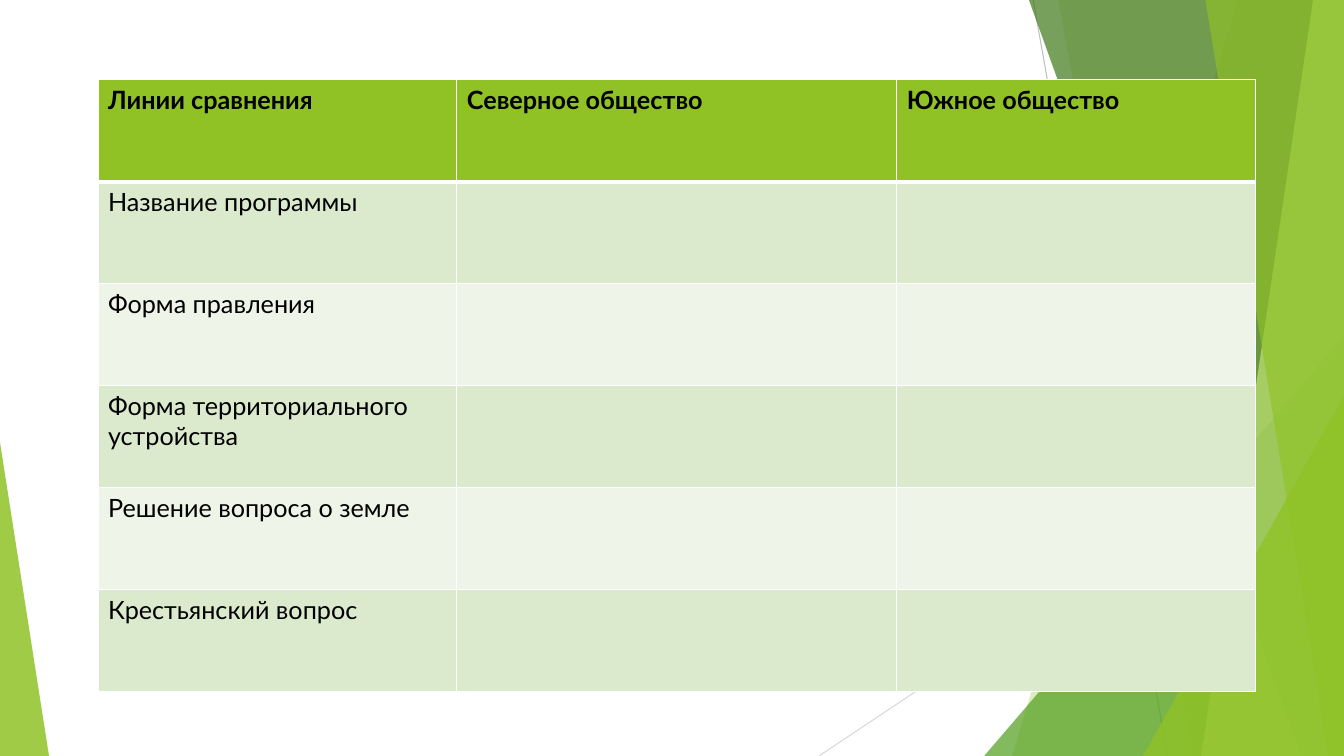
import pptx
import pptx.dml.color
import pptx.enum.shapes
import pptx.oxml
import pptx.oxml.ns
import pptx.util

Pt = pptx.util.Pt
qn = pptx.oxml.ns.qn

THEME = {
    "lime": "90C226", "green": "54A021", "forest": "3F7819", "pale": "C0E474",
    "line_dark": "BFBFBF", "line_light": "D9D9D9", "border": "FFFFFF",
    "text": "000000", "bands": ("DBE9CD", "EEF4E8"),
    "font": {"name": "Lato", "size": Pt(18)},
}

HEADER = ("Линии сравнения", "Северное общество", "Южное общество")
TOPICS = (
    "Название программы",
    "Форма правления",
    "Форма территориального устройства",
    "Решение вопроса о земле",
    "Крестьянский вопрос",
)


def rgb(name):
    """Return the colour for a hex string."""
    return pptx.dml.color.RGBColor.from_string(name)


def paint(sp, color, opacity):
    """Fill a shape with a translucent colour, without line or shadow."""
    sp.shadow.inherit = False
    sp.fill.solid()
    sp.fill.fore_color.rgb = rgb(color)
    clr = sp._element.spPr.find(".//" + qn("a:srgbClr"))
    clr.append(clr.makeelement(qn("a:alpha"), {"val": str(opacity * 1000)}))
    sp.line.fill.background()


def add_line(s, x1, y1, x2, y2, color):
    """Draw a thin straight line."""
    ln = s.shapes.add_connector(pptx.enum.shapes.MSO_CONNECTOR.STRAIGHT,
                                Pt(x1), Pt(y1), Pt(x2), Pt(y2))
    ln.line.color.rgb = rgb(color)
    ln.line.width = Pt(0.75)
    sppr = ln._element.spPr
    sppr.append(sppr.makeelement(qn("a:effectLst"), {}))


def add_panel(s, x, y, w, h, top, bottom, color, opacity):
    """Draw a slanted panel that reaches the right edge of the box."""
    fb = s.shapes.build_freeform(Pt(x + top), Pt(y))
    fb.add_line_segments([(Pt(x + w), Pt(y)), (Pt(x + w), Pt(y + h)),
                          (Pt(x + bottom), Pt(y + h))], close=True)
    paint(fb.convert_to_shape(), color, opacity)


def add_triangle(s, x, y, w, h, apex, color, opacity):
    """Draw a triangle with its apex at the given share of the width."""
    sp = s.shapes.add_shape(pptx.enum.shapes.MSO_SHAPE.ISOSCELES_TRIANGLE,
                            Pt(x), Pt(y), Pt(w), Pt(h))
    sp.adjustments[0] = apex
    paint(sp, color, opacity)


def add_facets(s, x, y, w, h):
    """Draw the overlapping green facets on the right side."""
    add_line(s, x + 153, y, x + 249, y + h, THEME["line_dark"])
    add_line(s, x + w, y + 290, x, y + h, THEME["line_light"])
    facets = (
        (add_panel, 299, 138, "lime", 30),
        (add_panel, 171, 267, "lime", 20),
        (add_triangle, 118, 240, "green", 72),
        (add_panel, 150, 344.5, "forest", 70),
        (add_panel, 353, 273, "pale", 70),
        (add_panel, 276, 364, "lime", 65),
        (add_triangle, 231.5, 283, "lime", 80),
    )
    for draw, a, b, color, opacity in facets:
        if draw is add_panel:
            add_panel(s, x, y, w, h, a, b, THEME[color], opacity)
        else:
            add_triangle(s, x + a, y + b, w - a, h - b, 1, THEME[color], opacity)


def format_cell(cell, text, fill, bold, bottom):
    """Set the borders, fill and text of a table cell."""
    tcpr = cell._tc.get_or_add_tcPr()
    for side, width in (("L", 1), ("R", 1), ("T", 1), ("B", bottom)):
        tcpr.append(pptx.oxml.parse_xml(
            f'<a:ln{side} {pptx.oxml.ns.nsdecls("a")} w="{Pt(width)}">'
            f'<a:solidFill><a:srgbClr val="{THEME["border"]}"/></a:solidFill>'
            f'</a:ln{side}>'))
    cell.fill.solid()
    cell.fill.fore_color.rgb = rgb(fill)
    p = cell.text_frame.paragraphs[0]
    font = p.font
    if text:
        r = p.add_run()
        r.text = text
        font = r.font
    for key, value in {**THEME["font"], "bold": bold}.items():
        setattr(font, key, value)
    font.color.rgb = rgb(THEME["text"])


def add_comparison(s, x, y, w, h):
    """Build the table that compares the two societies."""
    rows = [HEADER] + [(topic, "", "") for topic in TOPICS]
    tbl = s.shapes.add_table(len(rows), len(HEADER),
                             Pt(x), Pt(y), Pt(w), Pt(h)).table
    for col, share in zip(tbl.columns, (0.31, 0.38, 0.31)):
        col.width = Pt(w * share)
    for i, texts in enumerate(rows):
        head = i == 0
        fill = THEME["lime"] if head else THEME["bands"][(i - 1) % 2]
        tbl.rows[i].height = Pt(h / len(rows))
        for j, text in enumerate(texts):
            format_cell(tbl.cell(i, j), text, fill, head, 3 if head else 1)


def main():
    """Build the slide and save it."""
    prs = pptx.Presentation()
    prs.slide_width, prs.slide_height = Pt(960), Pt(540)
    s = prs.slides.add_slide(prs.slide_layouts[6])
    add_facets(s, 585, 0, 375, 540)
    add_triangle(s, 0, 316, 35, 224, 0, THEME["lime"], 85)
    add_comparison(s, 70, 57, 827, 437)
    prs.save("out.pptx")


if __name__ == "__main__":
    main()
